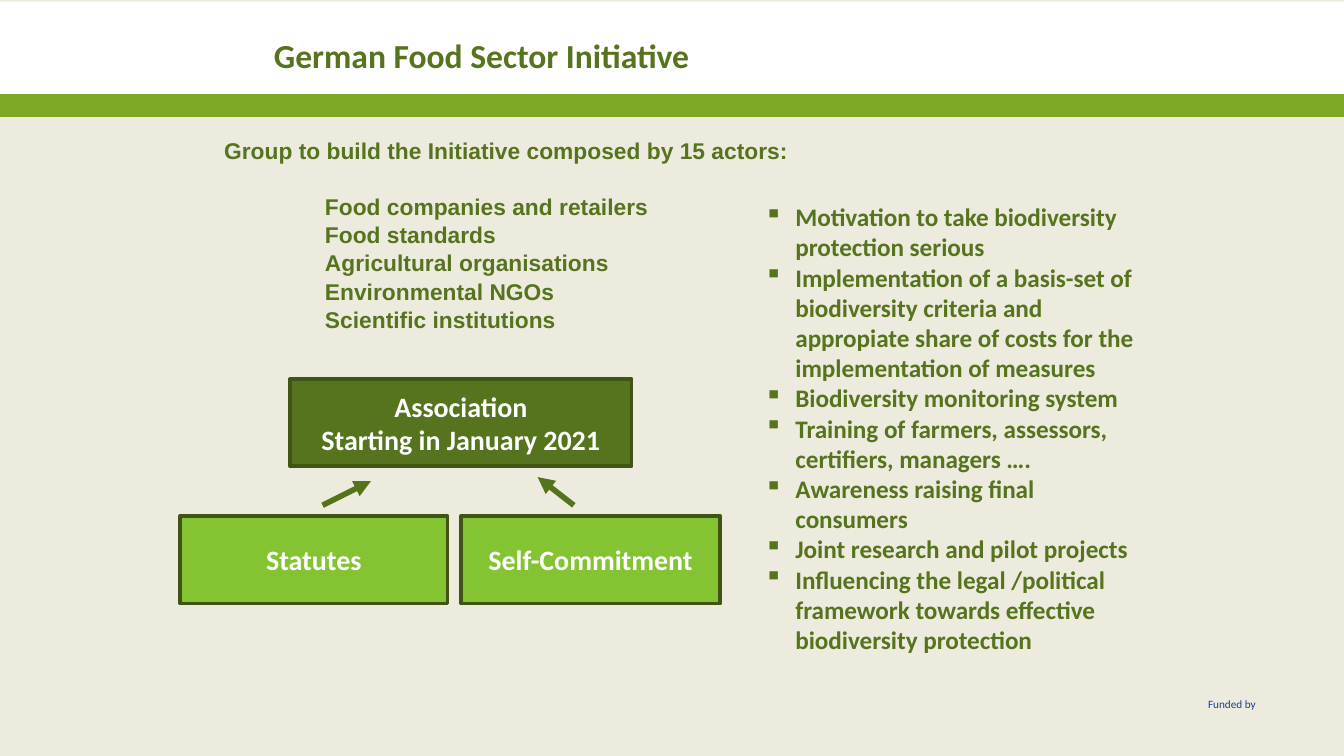
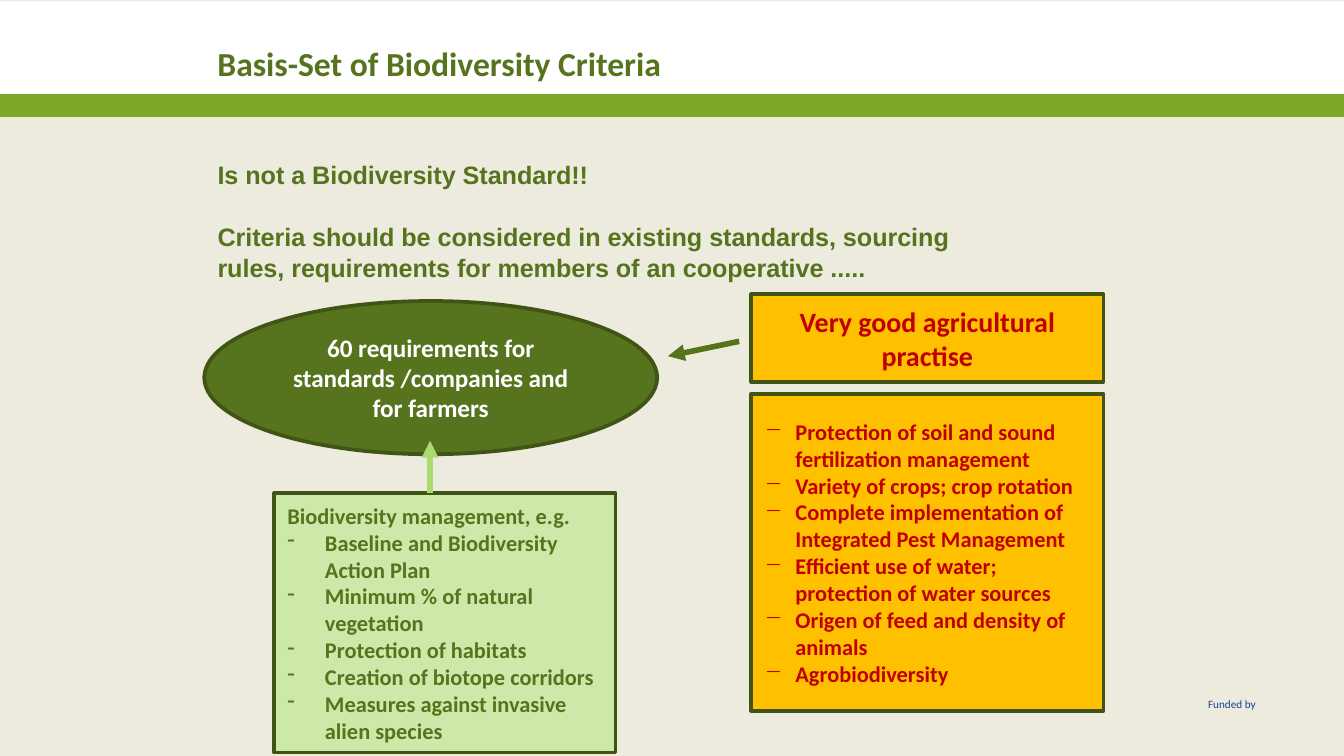
"""Build two slides on a food sector biodiversity initiative."""
from dataclasses import dataclass
from typing import Optional

from lxml.etree import SubElement
from pptx import Presentation
from pptx.dml.color import RGBColor
from pptx.enum.shapes import MSO_CONNECTOR, MSO_SHAPE
from pptx.enum.text import MSO_ANCHOR, PP_ALIGN
from pptx.oxml.ns import qn
from pptx.util import Inches, Length, Pt

COLS, ROWS, CELL = 100, 56.25, 0.1


@dataclass(frozen=True)
class Theme:
    """Colours, fonts and type sizes of the deck."""
    paper: str = "EDEBDE"
    white: str = "FFFFFF"
    band: str = "669900"
    band_alpha: int = 85
    dark: str = "56731D"
    outline: str = "405515"
    arrow: str = "55731A"
    fresh: str = "84C432"
    pale: str = "CDE9A9"
    pale_arrow: str = "ABDA6F"
    amber: str = "FFC000"
    red: str = "C00000"
    funding: str = "194097"
    body_font: str = "Calibri"
    lead_font: str = "Arial"
    title: float = 18
    label: float = 15
    text: float = 13.5
    lead: float = 12.2
    detail: float = 12
    footer: float = 6
    border: float = 2
    stroke: float = 3
    lead_spacing: float = 1.04


T = Theme()


@dataclass(frozen=True)
class Cell:
    """A place on the grid in columns and rows."""
    col: float
    row: float
    cols: float
    rows: float

    def box(self) -> tuple[Length, ...]:
        """Return left, top, width and height."""
        return tuple(Inches(v * CELL) for v in (self.col, self.row, self.cols, self.rows))


@dataclass(frozen=True)
class Line:
    """One paragraph with its indent in columns and space before in points."""
    text: str
    bullet: str = ""
    indent: float = 0
    before: float = 0


@dataclass(frozen=True)
class Style:
    """The look of a block's text."""
    size: float
    color: str = T.dark
    font: str = T.body_font
    bold: bool = True
    align: PP_ALIGN = PP_ALIGN.LEFT
    anchor: MSO_ANCHOR = MSO_ANCHOR.TOP
    spacing: Optional[float] = None
    inset: float = 0.5


@dataclass(frozen=True)
class Block:
    """Text in a plain box, or in a filled shape when a fill is given."""
    cell: Cell
    lines: tuple[Line, ...]
    style: Style
    fill: Optional[str] = None
    shape: MSO_SHAPE = MSO_SHAPE.RECTANGLE


@dataclass(frozen=True)
class Arrow:
    """An arrow between two grid points."""
    start: tuple[float, float]
    end: tuple[float, float]
    color: str = T.arrow


def centred(size: float, color: str = T.white) -> Style:
    """Return the style of a centred label."""
    return Style(size, color, align=PP_ALIGN.CENTER, anchor=MSO_ANCHOR.MIDDLE)


def listing(color: str) -> Style:
    """Return the style of a list inside a shape."""
    return Style(T.detail, color, anchor=MSO_ANCHOR.MIDDLE)


def lead(size: float, inset: float = 0.5) -> Style:
    """Return the style of an opening statement."""
    return Style(size, font=T.lead_font, spacing=T.lead_spacing, inset=inset)


def bullets(mark: str, indent: float, *texts: str) -> tuple[Line, ...]:
    """Return one bulleted line for each text."""
    return tuple(Line(text, mark, indent) for text in texts)


def rgb(color: str) -> RGBColor:
    """Turn a hex string into a colour."""
    return RGBColor.from_string(color)


def write(tf, lines: tuple[Line, ...], style: Style) -> None:
    """Fill a text frame with styled lines."""
    tf.word_wrap = True
    tf.vertical_anchor = style.anchor
    tf.margin_left = tf.margin_right = Inches(CELL)
    tf.margin_top = Inches(style.inset * CELL)
    tf.margin_bottom = Inches(CELL / 2)
    for i, line in enumerate(lines):
        p = tf.paragraphs[0] if i == 0 else tf.add_paragraph()
        p.text = line.text
        pPr = p._p.get_or_add_pPr()
        if line.indent:
            pPr.set("marL", str(Inches(line.indent * CELL)))
        if line.bullet:
            pPr.set("indent", str(-Inches(line.indent * CELL)))
            SubElement(pPr, qn("a:buChar")).set("char", line.bullet)
        p.alignment = style.align
        if style.spacing:
            p.line_spacing = style.spacing
        if line.before:
            p.space_before = Pt(line.before)
        for r in p.runs:
            r.font.name, r.font.size, r.font.bold = style.font, Pt(style.size), style.bold
            r.font.color.rgb = rgb(style.color)


def add_panel(s, cell: Cell, fill: str, border: Optional[str] = None,
              shape: MSO_SHAPE = MSO_SHAPE.RECTANGLE):
    """Draw a filled shape with an optional border."""
    sp = s.shapes.add_shape(shape, *cell.box())
    sp.shadow.inherit = False
    sp.fill.solid()
    sp.fill.fore_color.rgb = rgb(fill)
    if border:
        sp.line.color.rgb = rgb(border)
        sp.line.width = Pt(T.border)
    else:
        sp.line.fill.background()
    return sp


def add_block(s, block: Block) -> None:
    """Draw a block of text."""
    if block.fill:
        sp = add_panel(s, block.cell, block.fill, T.outline, block.shape)
    else:
        sp = s.shapes.add_textbox(*block.cell.box())
    write(sp.text_frame, block.lines, block.style)


def add_arrow(s, arrow: Arrow) -> None:
    """Draw an arrow with a triangular head."""
    ends = (Inches(v * CELL) for v in (*arrow.start, *arrow.end))
    sp = s.shapes.add_connector(MSO_CONNECTOR.STRAIGHT, *ends)
    sp.line.color.rgb = rgb(arrow.color)
    sp.line.width = Pt(T.stroke)
    SubElement(sp.line._get_or_add_ln(), qn("a:tailEnd")).set("type", "triangle")
    SubElement(sp._element.spPr, qn("a:effectLst"))


def add_slide(prs, title: str, corner: tuple[float, float], items: tuple) -> None:
    """Add a slide with the shared frame, its title and its items."""
    s = prs.slides.add_slide(prs.slide_layouts[6])
    s.background.fill.solid()
    s.background.fill.fore_color.rgb = rgb(T.paper)
    add_panel(s, Cell(0, 0.1, COLS, 8.6), T.white)
    band = add_panel(s, Cell(0, 7, COLS, 1.7), T.band)
    color = band._element.spPr.find(qn("a:solidFill"))[0]
    SubElement(color, qn("a:alpha")).set("val", str(T.band_alpha * 1000))
    add_block(s, Block(Cell(88.9, 51.4, 7.1, 2), (Line("Funded by"),),
                       Style(T.footer, T.funding, bold=False)))
    add_block(s, Block(Cell(*corner, 46.6, 4), (Line(title),), Style(T.title)))
    for item in items:
        (add_arrow if isinstance(item, Arrow) else add_block)(s, item)


ACTORS = ("Food companies and retailers", "Food standards", "Agricultural organisations",
          "Environmental NGOs", "Scientific institutions")
LABEL_ROWS = 6.5
RIGHT_COL = 55.9

INITIATIVE = (
    Block(Cell(15.7, 9.6, 61.3, 16.2),
          (Line("Group to build the Initiative composed by 15 actors:"),
           *(Line(actor, indent=7.5, before=0 if i else 14.6)
             for i, actor in enumerate(ACTORS))),
          lead(T.lead)),
    Block(Cell(13.4, 38.4, 19.9, LABEL_ROWS), (Line("Statutes"),), centred(T.label), T.fresh),
    Block(Cell(21.6, 28.2, 25.4, LABEL_ROWS),
          (Line("Association"), Line("Starting in January 2021")), centred(T.label), T.dark),
    Block(Cell(34.3, 38.4, 19.3, LABEL_ROWS), (Line("Self-Commitment"),),
          centred(T.label), T.fresh),
    Block(Cell(RIGHT_COL, 14.5, 30.7, 39.6),
          bullets("▪", 2.3,
                  "Motivation to take biodiversity protection serious",
                  "Implementation of a basis-set of biodiversity criteria and appropiate "
                  "share of costs for the implementation of measures",
                  "Biodiversity monitoring system",
                  "Training of farmers, assessors, certifiers, managers ….",
                  "Awareness raising final consumers",
                  "Joint research and pilot projects",
                  "Influencing the legal /political framework towards effective "
                  "biodiversity protection"),
          Style(T.text)),
    Arrow((24, 37.6), (27.6, 35.8)),
    Arrow((42.7, 37.6), (40, 35.5)),
)

CRITERIA = (
    Block(Cell(15.2, 10, 58.9, 14.7),
          (Line("Is not a Biodiversity Standard!!"),
           Line("Criteria should be considered in existing standards, sourcing rules, "
                "requirements for members of an cooperative .....", before=16.2)),
          lead(T.text, inset=1.8)),
    Block(Cell(20.4, 36.7, 25.4, 19.3),
          (Line("Biodiversity management, e.g."),
           *bullets("-", 2.8,
                    "Baseline and Biodiversity Action Plan",
                    "Minimum % of natural vegetation",
                    "Protection of habitats",
                    "Creation of biotope corridors",
                    "Measures against invasive alien species")),
          listing(T.dark), T.pale),
    Block(Cell(RIGHT_COL, 21.9, 26.2, LABEL_ROWS),
          (Line("Very good agricultural practise"),), centred(T.label, T.red), T.amber),
    Arrow((55, 25.4), (49.7, 26.5)),
    Block(Cell(15.2, 22.4, 33.7, 11.4),
          (Line("60 requirements for standards /companies and for farmers"),),
          centred(T.text), T.dark, MSO_SHAPE.OVAL),
    Block(Cell(RIGHT_COL, 29.3, 26.2, 23.6),
          bullets("−", 2.3,
                  "Protection of soil and sound fertilization management",
                  "Variety of crops; crop rotation",
                  "Complete implementation of Integrated Pest Management",
                  "Efficient use of water; protection of water sources",
                  "Origen of feed and density of animals",
                  "Agrobiodiversity"),
          listing(T.red), T.amber),
    Arrow((32, 36.7), (32, 32.8), T.pale_arrow),
)


def main() -> None:
    """Build and save the deck."""
    prs = Presentation()
    prs.slide_width, prs.slide_height = Inches(COLS * CELL), Inches(ROWS * CELL)
    add_slide(prs, "German Food Sector Initiative", (19.4, 2.1), INITIATIVE)
    add_slide(prs, "Basis-Set of Biodiversity Criteria", (15.2, 2.7), CRITERIA)
    prs.save("out.pptx")


if __name__ == "__main__":
    main()
